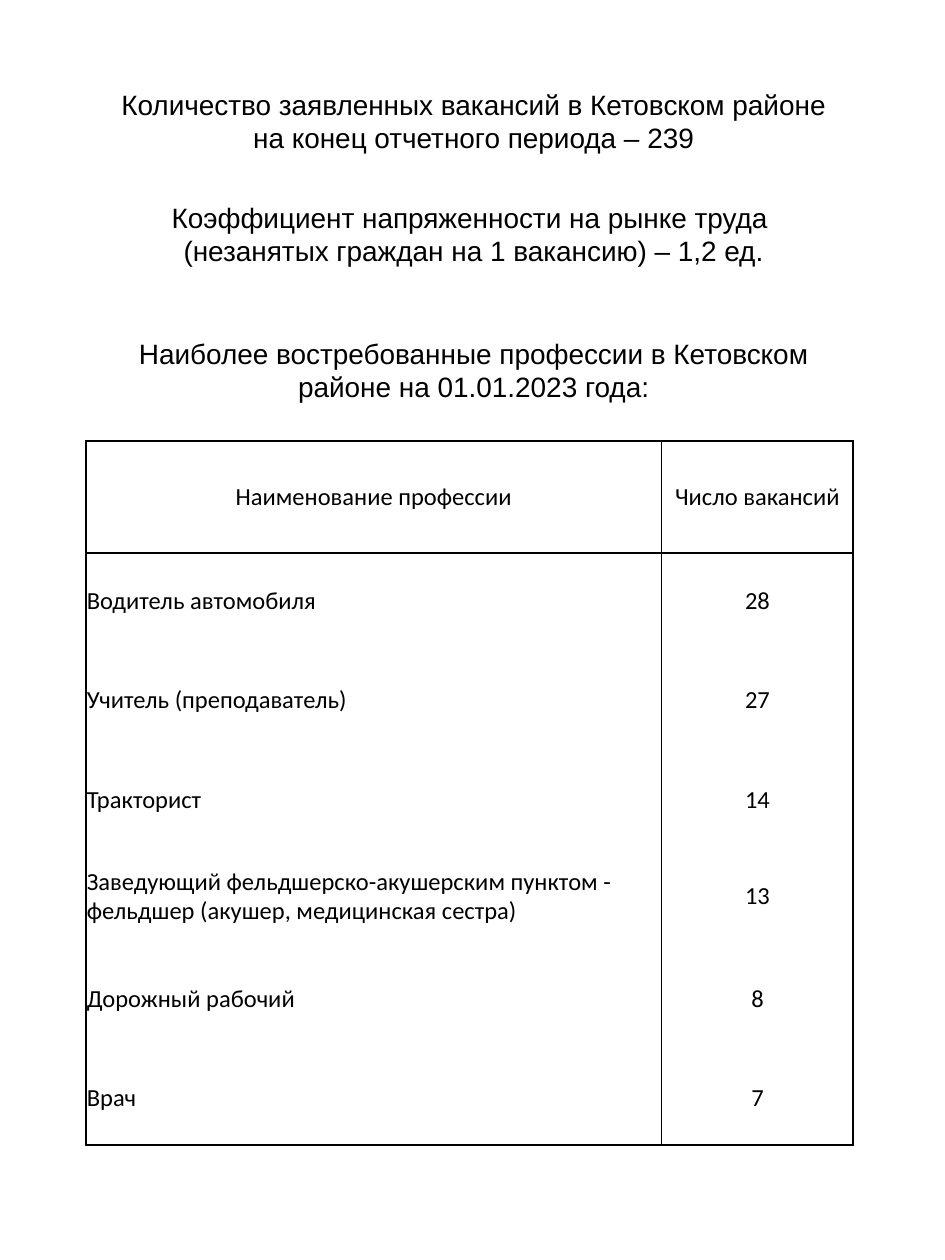
"""Build the slide on vacancies and the most wanted jobs of the district."""
from lxml import etree
from pptx import Presentation
from pptx import util as u
from pptx.dml.color import RGBColor
from pptx.enum import text
from pptx.oxml import ns

INK = {"text": "000000", "line": "000000"}
HEADS = [
    (1.63, ["Количество заявленных вакансий в Кетовском районе на конец отчетного периода – 239"]),
    (3.91, ["Коэффициент напряженности на рынке труда ",
            "(незанятых граждан на 1 вакансию) – 1,2 ед."]),
    (6.65, ["Наиболее востребованные профессии в Кетовском районе на 01.01.2023 года:"]),
]
JOBS = [
    ("Наименование профессии", "Число вакансий", 2.26),
    ("Водитель автомобиля", "28", 1.9),
    ("Учитель (преподаватель)", "27", 2.11),
    ("Тракторист", "14", 1.9),
    ("Заведующий фельдшерско-акушерским пунктом - фельдшер (акушер, медицинская сестра)", "13", 2.01),
    ("Дорожный рабочий", "8", 2.11),
    ("Врач", "7", 1.9),
]


def write(frame, lines, font, size, align=text.PP_ALIGN.CENTER):
    """Fill a text frame with one paragraph per line."""
    for i, line in enumerate(lines):
        para = frame.paragraphs[0] if i == 0 else frame.add_paragraph()
        para.alignment = align
        run = para.add_run()
        run.text = line
        run.font.name, run.font.size = font, u.Pt(size)
        run.font.color.rgb = RGBColor.from_string(INK["text"])


def edge(cell, drawn):
    """Draw the given sides of a cell and hide the others."""
    props = cell._tc.get_or_add_tcPr()
    for i, side in enumerate("LRTB"):
        line = etree.Element(ns.qn(f"a:ln{side}"), w=str(u.Pt(1)))
        if side in drawn:
            fill = etree.SubElement(line, ns.qn("a:solidFill"))
            etree.SubElement(fill, ns.qn("a:srgbClr"), val=INK["line"])
        else:
            etree.SubElement(line, ns.qn("a:noFill"))
        props.insert(i, line)


deck = Presentation()
deck.slide_width, deck.slide_height = u.Cm(19.05), u.Cm(25.4)
slide = deck.slides.add_slide(deck.slide_layouts[5])

for i, (top, lines) in enumerate(HEADS):
    place = [u.Cm(n) for n in (1.88, top, 15.34, 1.63)]
    if i == 0:
        box = slide.shapes.title
        box.left, box.top, box.width, box.height = place
    else:
        box = slide.shapes.add_textbox(*place)
    frame = box.text_frame
    frame.word_wrap = True
    frame.auto_size = text.MSO_AUTO_SIZE.SHAPE_TO_FIT_TEXT
    frame.vertical_anchor = text.MSO_ANCHOR.TOP
    write(frame, lines, "Arial", 16)

high = sum(job[2] for job in JOBS)
grid = slide.shapes.add_table(len(JOBS), 2, u.Cm(1.73), u.Cm(8.89), u.Cm(15.47), u.Cm(high)).table
grid.first_row = grid.horz_banding = False
for col, wide in zip(grid.columns, (11.61, 3.86)):
    col.width = u.Cm(wide)

last = len(JOBS) - 1
for r, (*words, tall) in enumerate(JOBS):
    grid.rows[r].height = u.Cm(tall)
    sides = "LR" + ("T" if r < 2 else "") + ("B" if r in (0, last) else "")
    for c, word in enumerate(words):
        cell = grid.cell(r, c)
        cell.margin_left = cell.margin_right = cell.margin_top = u.Cm(0.02)
        cell.margin_bottom = u.Cm(0)
        cell.vertical_anchor = text.MSO_ANCHOR.MIDDLE
        cell.fill.background()
        edge(cell, sides)
        left = r > 0 and c == 0
        align = text.PP_ALIGN.LEFT if left else text.PP_ALIGN.CENTER
        write(cell.text_frame, [word], "Calibri", 14, align)

deck.save("out.pptx")
